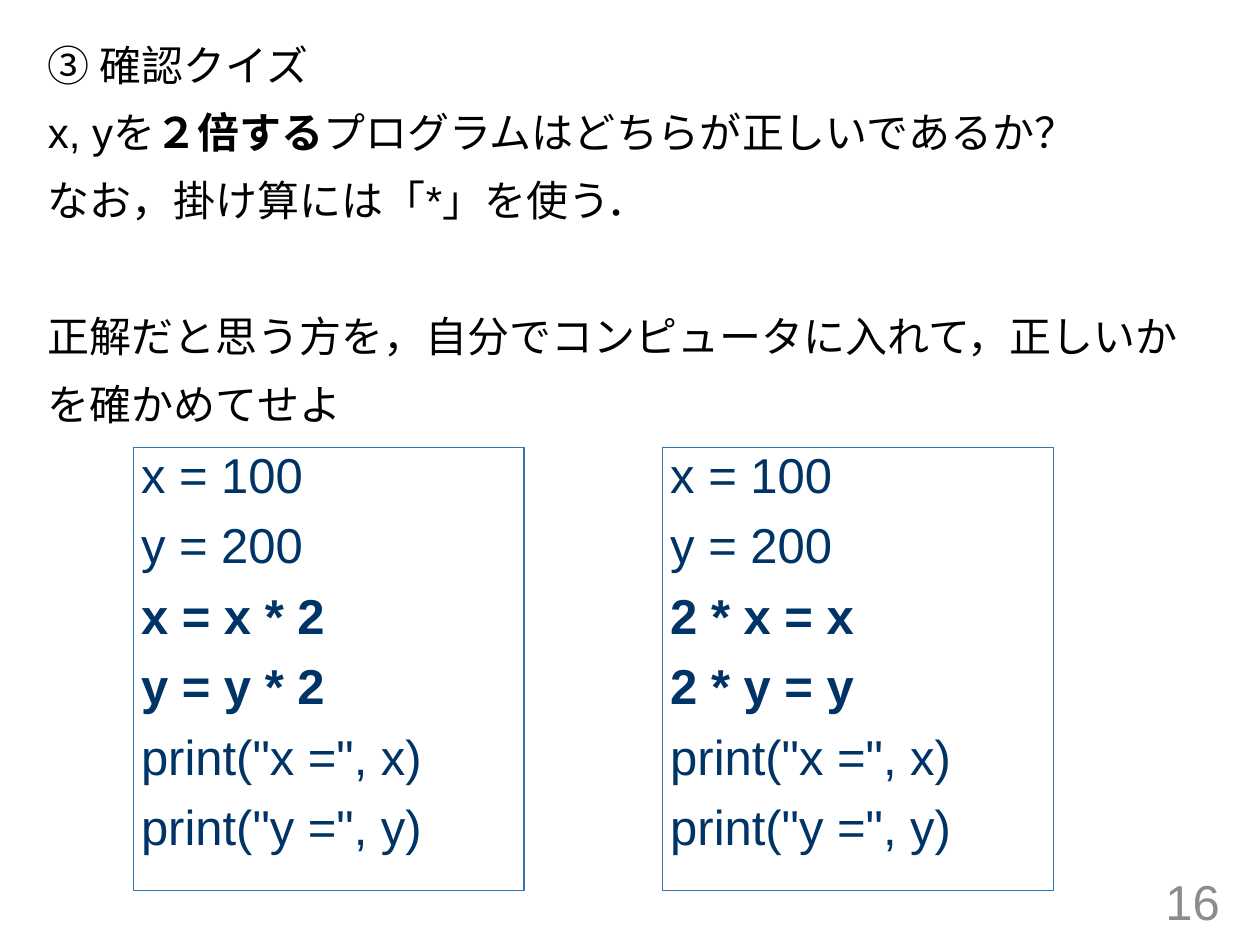
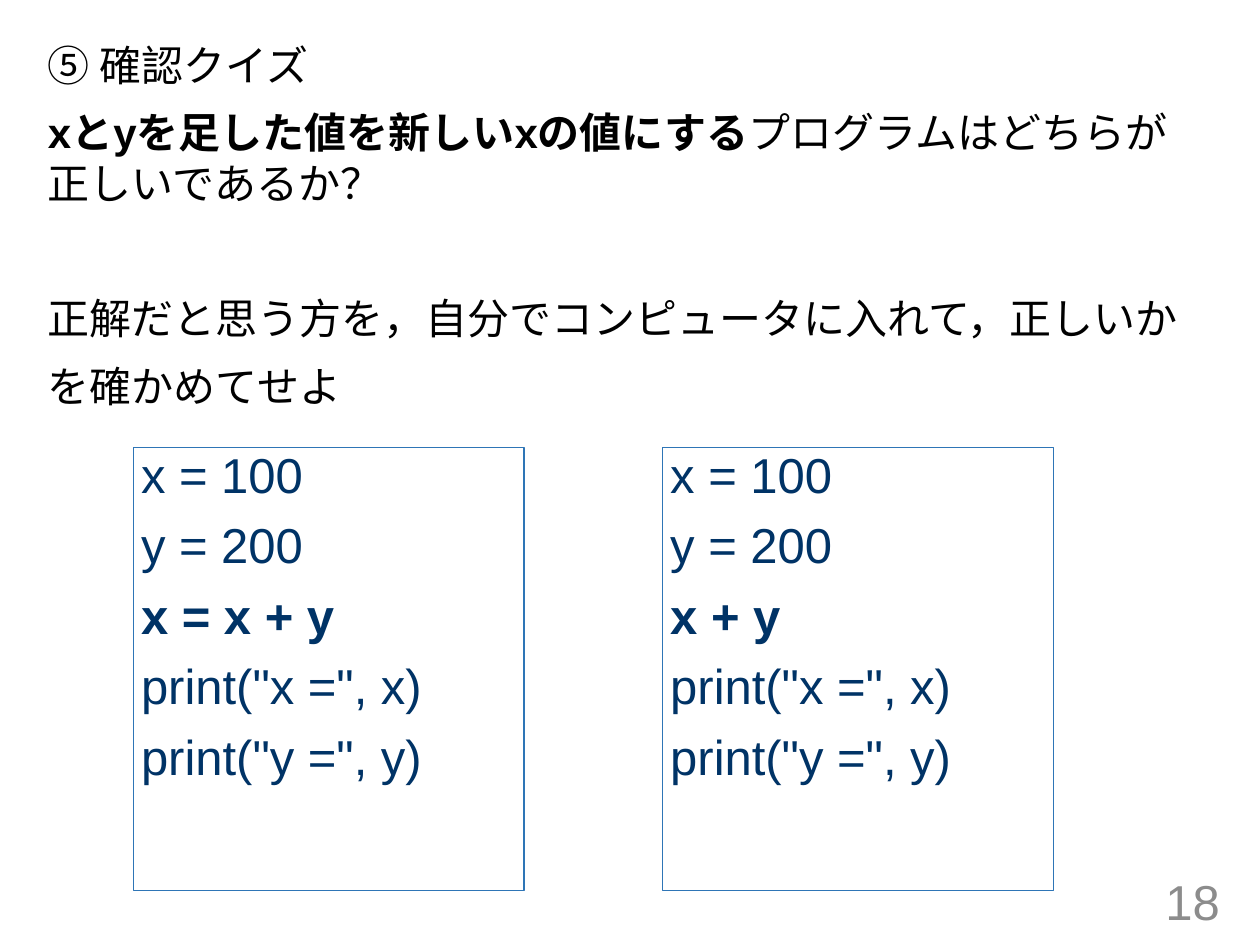
from dataclasses import dataclass
from typing import NamedTuple

from lxml import etree
from pptx import Presentation
from pptx.dml.color import RGBColor
from pptx.enum.shapes import MSO_SHAPE
from pptx.enum.text import MSO_ANCHOR, MSO_AUTO_SIZE, PP_ALIGN
from pptx.oxml.ns import qn
from pptx.util import Inches, Pt

RECT = MSO_SHAPE.RECTANGLE
TOP, MIDDLE = MSO_ANCHOR.TOP, MSO_ANCHOR.MIDDLE
LEFT, RIGHT = PP_ALIGN.LEFT, PP_ALIGN.RIGHT
FIXED = MSO_AUTO_SIZE.NONE

WIDTH, HEIGHT = Inches(10), Inches(7.5)
COLS, ROWS = 100, 75
FACE = "Arial"
BLACK, GREY, NAVY, BLUE = "000000", "8C8C8C", "003366", "2E75B6"
SPACE, BREAK = 10, 48.6


class Area(NamedTuple):
    col: float
    row: float
    wide: float
    high: float


class Part(NamedTuple):
    text: str
    bold: bool = False


@dataclass
class Quiz:
    number: str
    ask: list[list[Part]]
    codes: list[list[Part]]


BODY = Area(2.8, 2.6, 92.5, 58.3)
FOOT = Area(75.3, 69.5, 22.5, 4)
PANEL = Area(10.6, 35.5, 31, 35.2)
STEP = 42

TASK = [
    [Part("正解だと思う方を，自分でコンピュータに入れて，正しいか")],
    [Part("を確かめてせよ")],
]
START = [Part("x = 100"), Part("y = 200")]
SHOW = [Part('print("x =", x)'), Part('print("y =", y)')]


def code(*lines: str) -> list[Part]:
    return START + [Part(line, True) for line in lines] + SHOW


QUIZZES = [
    Quiz(
        "16",
        [
            [Part("③ 確認クイズ")],
            [Part("x, yを"), Part("２倍する", True),
             Part("プログラムはどちらが正しいであるか？")],
            [Part("なお，掛け算には「*」を使う．")],
        ],
        [code("x = x * 2", "y = y * 2"), code("2 * x = x", "2 * y = y")],
    ),
    Quiz(
        "18",
        [
            [Part("⑤ 確認クイズ")],
            [Part("xとyを足した値を新しいxの値にする", True),
             Part("プログラムはどちらが正しいであるか？")],
        ],
        [code("x = x + y"), code("x + y")],
    ),
]


def paint(value: str) -> RGBColor:
    return RGBColor.from_string(value)


def spots(area: Area) -> tuple[int, int, int, int]:
    return (
        int(WIDTH * area.col / COLS),
        int(HEIGHT * area.row / ROWS),
        int(WIDTH * area.wide / COLS),
        int(HEIGHT * area.high / ROWS),
    )


def write(frame, lines: list[list[Part]], size: int, color: str,
          align=LEFT, anchor=TOP, pitch: float = 1.0) -> None:
    frame.word_wrap = True
    frame.auto_size = FIXED
    frame.vertical_anchor = anchor
    for place, parts in enumerate(lines):
        para = frame.add_paragraph() if place else frame.paragraphs[0]
        props = para._p.get_or_add_pPr()
        props.set("marL", "0")
        props.set("indent", "0")
        etree.SubElement(props, qn("a:buNone"))
        para.alignment = align
        para.line_spacing = pitch
        para.space_before = Pt(SPACE if place else 0)
        para.font.name = FACE
        para.font.size = Pt(size)
        para.font.color.rgb = paint(color)
        for part in parts:
            run = para.add_run()
            run.text = part.text
            if len(parts) > 1:
                run.font.bold = part.bold
        if len(parts) == 1:
            para.font.bold = parts[0].bold


def panel(slide, area: Area, lines: list[Part]) -> None:
    box = slide.shapes.add_shape(RECT, *spots(area))
    box.shadow.inherit = False
    box.fill.background()
    box.line.color.rgb = paint(BLUE)
    box.line.width = Pt(0.75)
    frame = box.text_frame
    frame.margin_left = frame.margin_right = Inches(0.06)
    frame.margin_top = frame.margin_bottom = Inches(0.03)
    write(frame, [[line] for line in lines], 28, NAVY, pitch=0.9)


def draw(deck, quiz: Quiz) -> None:
    slide = deck.slides.add_slide(deck.slide_layouts[1])
    title, body = slide.placeholders
    title.element.getparent().remove(title.element)
    body.left, body.top, body.width, body.height = spots(BODY)
    write(body.text_frame, quiz.ask + TASK, 24, BLACK)
    body.text_frame.paragraphs[len(quiz.ask)].space_before = Pt(BREAK)
    foot = slide.shapes.add_textbox(*spots(FOOT))
    write(foot.text_frame, [[Part(quiz.number)]], 28, GREY, RIGHT, MIDDLE)
    for place, lines in enumerate(quiz.codes):
        area = PANEL._replace(col=PANEL.col + place * STEP)
        panel(slide, area, lines)


def main() -> None:
    deck = Presentation()
    deck.slide_width, deck.slide_height = WIDTH, HEIGHT
    for quiz in QUIZZES:
        draw(deck, quiz)
    deck.save("out.pptx")


if __name__ == "__main__":
    main()
